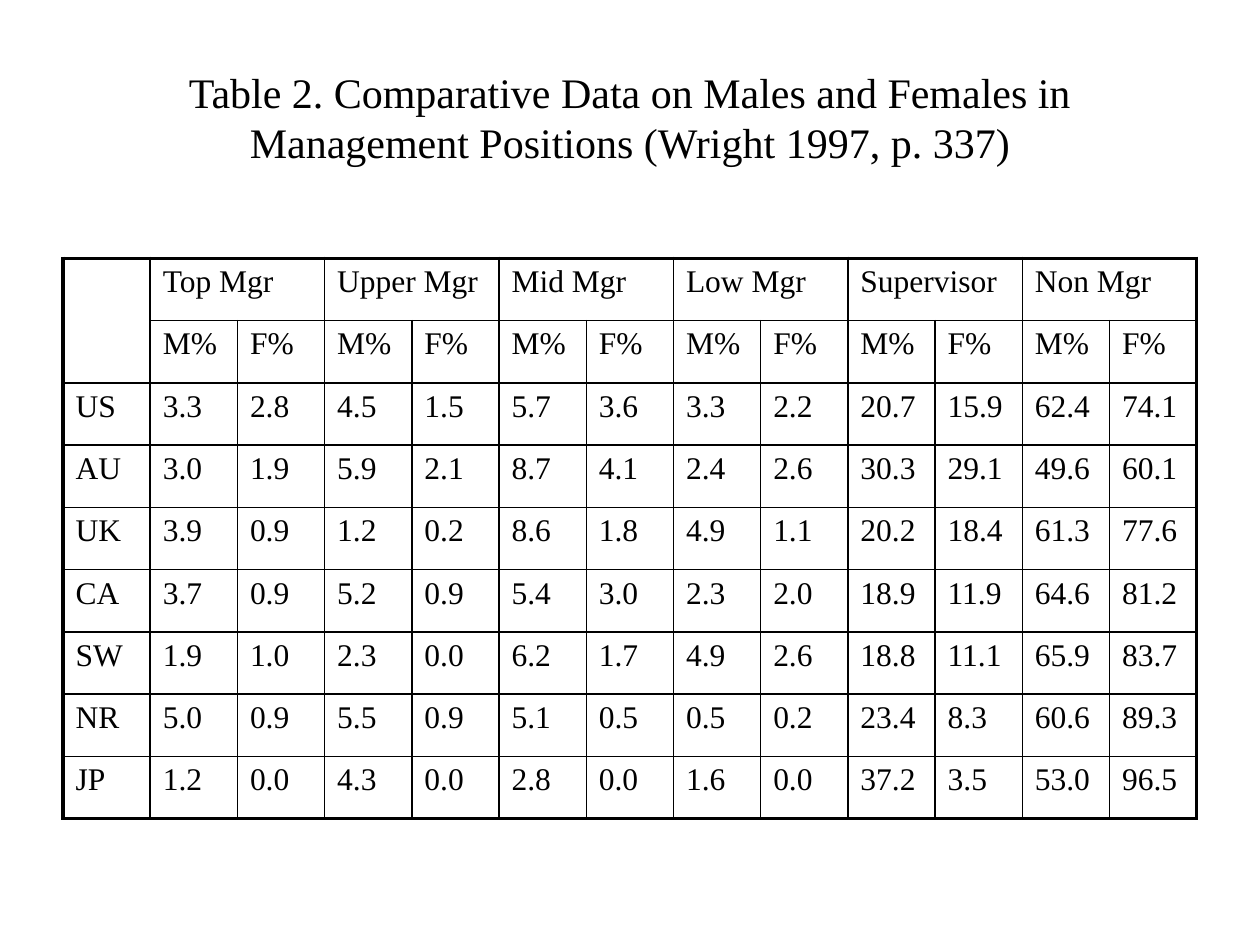
"""Build a slide with a table of males and females in management positions."""
import pptx
import pptx.dml.color
import pptx.enum.text
import pptx.oxml
import pptx.oxml.ns
import pptx.util
from pptx.util import Inches

TITLE = ("Table 2. Comparative Data on Males and Females in "
         "Management Positions (Wright 1997, p. 337)")
LEVELS = ["Top Mgr", "Upper Mgr", "Mid Mgr", "Low Mgr", "Supervisor", "Non Mgr"]
SEXES = ["M%", "F%"]
SHARES = {
    "US": [3.3, 2.8, 4.5, 1.5, 5.7, 3.6, 3.3, 2.2, 20.7, 15.9, 62.4, 74.1],
    "AU": [3.0, 1.9, 5.9, 2.1, 8.7, 4.1, 2.4, 2.6, 30.3, 29.1, 49.6, 60.1],
    "UK": [3.9, 0.9, 1.2, 0.2, 8.6, 1.8, 4.9, 1.1, 20.2, 18.4, 61.3, 77.6],
    "CA": [3.7, 0.9, 5.2, 0.9, 5.4, 3.0, 2.3, 2.0, 18.9, 11.9, 64.6, 81.2],
    "SW": [1.9, 1.0, 2.3, 0.0, 6.2, 1.7, 4.9, 2.6, 18.8, 11.1, 65.9, 83.7],
    "NR": [5.0, 0.9, 5.5, 0.9, 5.1, 0.5, 0.5, 0.2, 23.4, 8.3, 60.6, 89.3],
    "JP": [1.2, 0.0, 4.3, 0.0, 2.8, 0.0, 1.6, 0.0, 37.2, 3.5, 53.0, 96.5],
}
FONT, INK = "Times New Roman", "000000"
OUTER, INNER = 2.25, 1
PLAIN = dict.fromkeys(
    ["first_row", "horz_banding", "first_col", "last_row", "last_col", "vert_banding"], False)


def color(value):
    return pptx.dml.color.RGBColor.from_string(value)


def apply(target, values):
    for name, value in values.items():
        setattr(target, name, value)


def write(frame, text, size):
    span = frame.paragraphs[0].add_run()
    span.text = text
    apply(span.font, {"name": FONT, "size": pptx.util.Pt(size)})
    span.font.color.rgb = color(INK)


def add_borders(cell, widths):
    properties = cell._tc.get_or_add_tcPr()
    for index, (side, width) in enumerate(widths.items()):
        line = pptx.oxml.parse_xml(
            f'<a:ln{side} {pptx.oxml.ns.nsdecls("a")} w="{pptx.util.Pt(width)}">'
            f'<a:solidFill><a:srgbClr val="{INK}"/></a:solidFill></a:ln{side}>')
        properties.insert(index, line)


def add_title(page):
    box = page.shapes.add_textbox(Inches(0.5), Inches(0.3), Inches(9), Inches(1.25))
    apply(box.text_frame, {"word_wrap": True,
                           "vertical_anchor": pptx.enum.text.MSO_ANCHOR.MIDDLE})
    box.text_frame.paragraphs[0].alignment = pptx.enum.text.PP_ALIGN.CENTER
    write(box.text_frame, TITLE, 24)


def add_shares(page):
    rows = [[""] + [text for level in LEVELS for text in (level, "")],
            [""] + SEXES * len(LEVELS)]
    rows += [[country] + [f"{share:.1f}" for share in shares]
             for country, shares in SHARES.items()]
    height, width = len(rows), len(rows[0])
    table = page.shapes.add_table(
        height, width, Inches(0.5), Inches(2.05), Inches(9), Inches(4.45)).table
    apply(table, PLAIN)
    for column in table.columns:
        column.width = Inches(9 / width)
    for row in table.rows:
        row.height = Inches(4.45 / height)
    table.cell(0, 0).merge(table.cell(1, 0))
    for left in range(1, width, len(SEXES)):
        table.cell(0, left).merge(table.cell(0, left + len(SEXES) - 1))

    for top, texts in enumerate(rows):
        for left, text in enumerate(texts):
            cell = table.cell(top, left)
            cell.fill.background()
            if cell.is_spanned:
                continue
            if text:
                write(cell.text_frame, text, 18)
            right, bottom = left + cell.span_width, top + cell.span_height
            edges = {"L": left == 0, "R": right == width,
                     "T": top == 0, "B": bottom == height}
            add_borders(cell, {side: OUTER if outer else INNER
                               for side, outer in edges.items()})


def main():
    deck = pptx.Presentation()
    apply(deck, {"slide_width": Inches(10), "slide_height": Inches(7.5)})
    page = deck.slides.add_slide(deck.slide_layouts[6])
    add_title(page)
    add_shares(page)
    deck.save("out.pptx")


if __name__ == "__main__":
    main()
